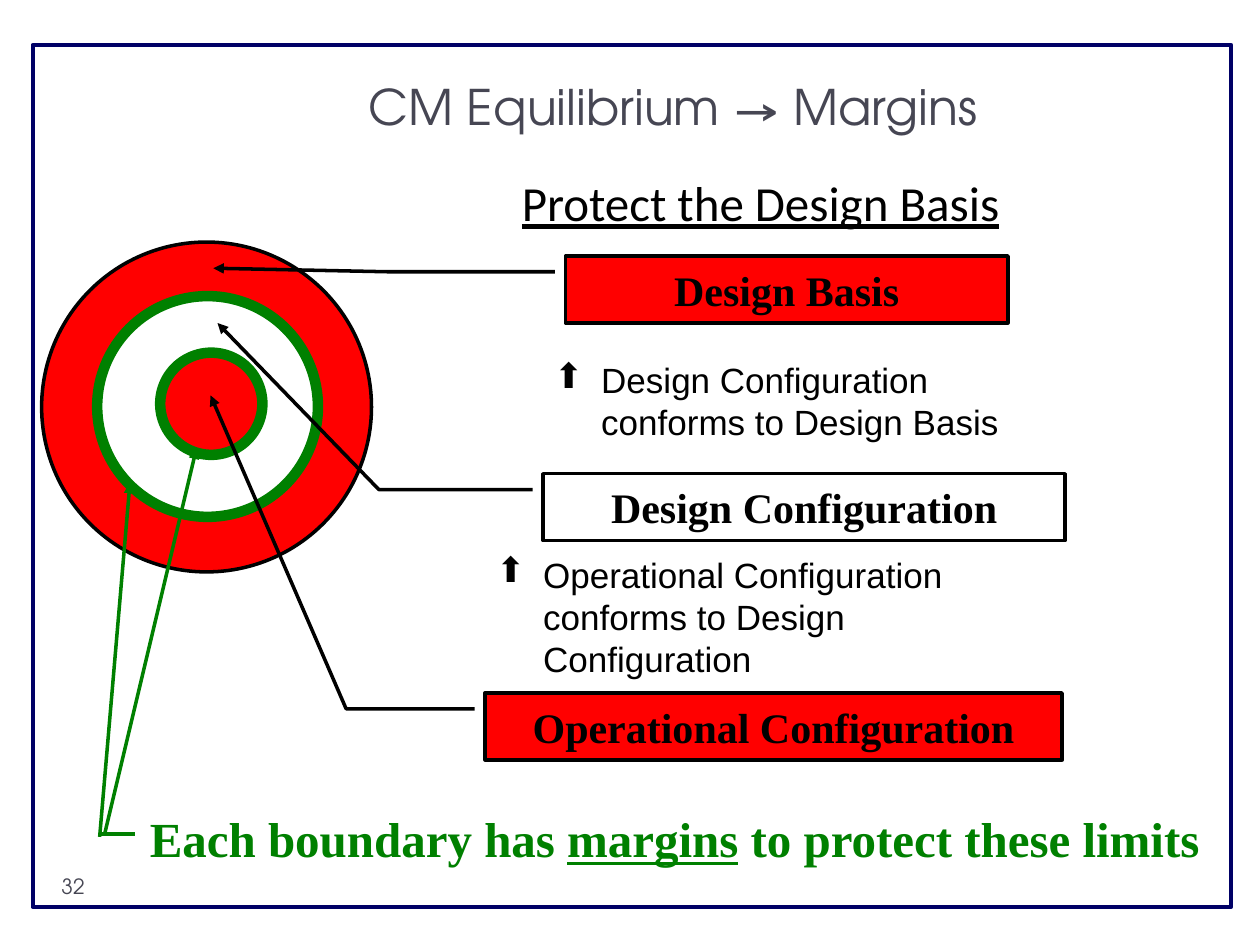
from dataclasses import dataclass

from lxml import etree
from pptx import Presentation
from pptx.dml.color import RGBColor
from pptx.enum import shapes, text
from pptx.oxml import ns
from pptx.util import Cm, Pt


@dataclass(frozen=True)
class Theme:
    red: RGBColor = RGBColor(0xFF, 0, 0)
    green: RGBColor = RGBColor(0, 0x80, 0)
    white: RGBColor = RGBColor(0xFF, 0xFF, 0xFF)
    black: RGBColor = RGBColor(0, 0, 0)
    navy: RGBColor = RGBColor(0, 0, 0x66)
    slate: RGBColor = RGBColor(0x46, 0x46, 0x53)
    heading: str = "TeX Gyre Adventor"
    subheading: str = "Calibri"
    label: str = "Times New Roman"
    body: str = "Arial"
    large: int = 28
    medium: int = 24
    small: int = 20
    tiny: int = 12


theme = Theme()
prs = Presentation()
prs.slide_width, prs.slide_height = Cm(25.4), Cm(19.05)
s = prs.slides.add_slide(prs.slide_layouts[6])


def add_shape(kind, box, fill, line, width):
    """Add a shape without shadow; a fill of None leaves it open."""
    sp = s.shapes.add_shape(kind, *map(Cm, box))
    sp.shadow.inherit = False
    if fill is None:
        sp.fill.background()
    else:
        sp.fill.solid()
        sp.fill.fore_color.rgb = fill
    sp.line.color.rgb = line
    sp.line.width = Pt(width)
    return sp


def add_text(box, parts, font, size, color, bold=None):
    """Add a one-paragraph text box; parts are (words, underlined) pairs."""
    sp = s.shapes.add_textbox(*map(Cm, box))
    sp.text_frame.word_wrap = True
    p = sp.text_frame.paragraphs[0]
    for words, underlined in parts:
        r = p.add_run()
        r.text = words
        r.font.name, r.font.size, r.font.bold = font, Pt(size), bold
        r.font.underline = underlined
        r.font.color.rgb = color
    return sp


# Headings
title = add_text((2.77, 1.45, 21.59, 1.4), [("CM Equilibrium → Margins", None)],
                 theme.heading, theme.large, theme.slate)
title.text_frame.vertical_anchor = text.MSO_ANCHOR.BOTTOM
title.text_frame.paragraphs[0].alignment = text.PP_ALIGN.CENTER
subtitle = add_text((9.5, 3.35, 13.39, 1.52), [("Protect the Design Basis", True)],
                    theme.subheading, theme.large, theme.black)
subtitle.text_frame.margin_left = Cm(1.02)

# Target discs
outer = (0.84, 4.88, 6.65, 6.65)
middle = (1.96, 5.97, 4.45, 4.45)
core = (3.23, 7.11, 2.06, 2.06)
for box, fill, width in ((outer, theme.red, 2), (middle, theme.white, 2.25),
                         (core, theme.red, 2.25)):
    add_shape(shapes.MSO_SHAPE.OVAL, box, fill, theme.black, width)

# Margin note and its pointers to the two boundaries
add_text((2.77, 16.18, 21.75, 1.45),
         [("Each boundary has ", None), ("margins", True),
          (" to protect these limits", None)],
         theme.label, theme.large, theme.green, True)
for start, end, arrow in (((2.72, 16.81), (2.01, 16.81), False),
                          ((2.01, 16.87), (2.62, 9.73), True),
                          ((2.11, 16.81), (3.96, 9.04), True)):
    pointer = s.shapes.add_connector(shapes.MSO_CONNECTOR.STRAIGHT,
                                     *map(Cm, start + end))
    pointer.line.color.rgb = theme.green
    pointer.line.width = Pt(2)
    if arrow:
        etree.SubElement(pointer.line._get_or_add_ln(), ns.qn("a:tailEnd"), type="triangle")
    etree.SubElement(pointer._element.spPr, ns.qn("a:effectLst"))

# Green boundaries
for box in (core, middle):
    add_shape(shapes.MSO_SHAPE.OVAL, box, None, theme.green, 6)

# Labels that point into the target
callouts = (
    ("Design Basis", (11.4, 5.16, 8.92, 1.35), theme.red,
     (0.237, -0.024, 0.237, -0.403, 0.184, -0.796)),
    ("Design Configuration", (10.95, 9.55, 10.52, 1.35), None,
     (0.237, -0.02, 0.237, -0.315, -2.25, -0.624)),
    ("Operational Configuration", (9.78, 13.97, 11.63, 1.35), theme.red,
     (0.237, -0.018, 0.237, -0.241, -4.444, -0.476)),
)
for label, box, fill, leader in callouts:
    sp = add_shape(shapes.MSO_SHAPE.LINE_CALLOUT_2, box, fill, theme.black, 2)
    for i, value in enumerate(leader):
        sp.adjustments[i] = value
    etree.SubElement(sp.line._get_or_add_ln(), ns.qn("a:tailEnd"), type="triangle")
    tf = sp.text_frame
    tf.text = label
    tf.vertical_anchor = text.MSO_ANCHOR.MIDDLE
    p = tf.paragraphs[0]
    p.alignment = text.PP_ALIGN.CENTER
    font = p.runs[0].font
    font.name, font.size, font.bold = theme.label, Pt(theme.medium), True
    font.color.rgb = theme.black

# Conformance rules between the labels
for rule, box in (
        ("Operational Configuration conforms to Design Configuration",
         (9.75, 11.15, 11.94, 2.54)),
        ("Design Configuration conforms to Design Basis",
         (10.92, 6.81, 10.59, 2.54))):
    sp = add_text(box, [(rule, None)], theme.body, theme.small, theme.black)
    sp.text_frame.vertical_anchor = text.MSO_ANCHOR.MIDDLE
    pPr = sp.text_frame.paragraphs[0]._p.get_or_add_pPr()
    pPr.set("marL", str(Cm(0.95)))
    pPr.set("indent", str(-Cm(0.95)))
    etree.SubElement(pPr, ns.qn("a:buChar"), char="⬆")

# Frame and page number
add_shape(shapes.MSO_SHAPE.RECTANGLE, (0.66, 0.91, 24.16, 17.37), None, theme.navy, 2.5)
add_text((0.99, 17.48, 1.17, 1.02), [("32", None)], theme.heading, theme.tiny, theme.slate)

prs.save("out.pptx")
